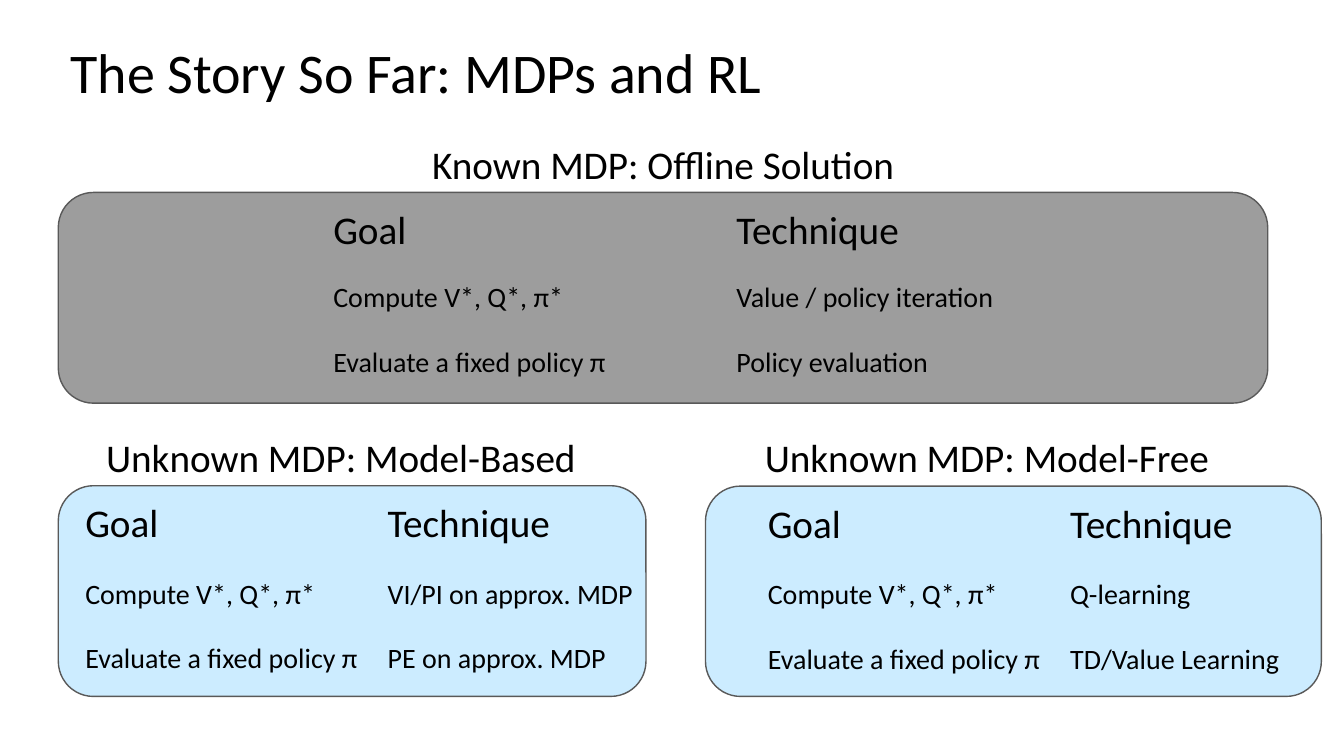
from dataclasses import dataclass

from lxml.etree import SubElement
from pptx import Presentation
from pptx.dml.color import RGBColor as Rgb
from pptx.enum.shapes import MSO_SHAPE as Shape
from pptx.enum.text import MSO_ANCHOR as Anchor, PP_ALIGN as Align
from pptx.oxml.ns import qn
from pptx.util import Cm, Pt


@dataclass(frozen=True)
class Theme:
    font: str = "Calibri"
    ink: Rgb = Rgb(0x00, 0x00, 0x00)
    edge: Rgb = Rgb(0x59, 0x59, 0x59)
    gray: Rgb = Rgb(0x9D, 0x9D, 0x9D)
    blue: Rgb = Rgb(0xCC, 0xEC, 0xFF)
    title: int = 40
    head: int = 28
    body: int = 20
    gap: int = 22  # space above a row, in points


@dataclass(frozen=True)
class Box:
    left: float
    top: float
    width: float
    height: float

    def place(self):
        return Cm(self.left), Cm(self.top), Cm(self.width), Cm(self.height)


THEME = Theme()
HEAD = 1.45  # height of a panel heading
LIST = 6.32  # height of a panel's text


def style(para, size):
    for run in para.runs:
        run.font.name = THEME.font
        run.font.size = Pt(size)
        run.font.color.rgb = THEME.ink


def add_title(slide, box, text):
    title = slide.shapes.title
    title.left, title.top, title.width, title.height = box.place()
    frame = title.text_frame
    frame.text = text
    frame.vertical_anchor = Anchor.MIDDLE
    para = frame.paragraphs[0]
    para.alignment = Align.LEFT
    para.line_spacing = 0.9
    style(para, THEME.title)


def add_text(slide, box):
    frame = slide.shapes.add_textbox(*box.place()).text_frame
    frame.word_wrap = True
    return frame


def add_tab(para, pos):
    stops = SubElement(para._p.get_or_add_pPr(), qn("a:tabLst"))
    SubElement(stops, qn("a:tab"), pos=str(Cm(pos)), algn="l")


def add_panel(slide, box, fill, head, rows, span, inset, width, tab, gap=THEME.gap):
    """Heading over a rounded box; span is the heading's offset and width."""
    # Heading
    shift, wide = span
    frame = add_text(slide, Box(box.left + shift, box.top - HEAD, wide, HEAD))
    frame.text = head
    para = frame.paragraphs[0]
    para.alignment = Align.CENTER
    style(para, THEME.head)

    # Rounded box
    card = slide.shapes.add_shape(Shape.ROUNDED_RECTANGLE, *box.place())
    card.shadow.inherit = False
    card.fill.solid()
    card.fill.fore_color.rgb = fill
    card.line.color.rgb = THEME.edge
    card.line.width = Pt(1)

    # Goals and techniques, in two columns
    frame = add_text(slide, Box(box.left + inset, box.top + 0.2, width, LIST))
    lines = [("Goal", "Technique"), *rows]
    frame.text = "\n".join("\t".join(line) for line in lines)
    for i, para in enumerate(frame.paragraphs):
        if i:
            para.space_before = Pt(gap if i == 1 else THEME.gap)
        add_tab(para, tab)
        style(para, THEME.body if i else THEME.head)


def main():
    deck = Presentation()
    deck.slide_width, deck.slide_height = Cm(33.87), Cm(19.05)
    slide = deck.slides.add_slide(deck.slide_layouts[5])
    goals = "Compute V*, Q*, π*", "Evaluate a fixed policy π"

    add_title(slide, Box(1.52, 1.02, 29.21, 1.75), "The Story So Far: MDPs and RL")

    # Known MDP
    add_panel(slide, Box(1.47, 4.85, 30.48, 5.31), THEME.gray,
              "Known MDP: Offline Solution",
              zip(goals, ("Value / policy iteration", "Policy evaluation")),
              span=(0, 30.48), inset=6.68, width=22.71, tab=10.16, gap=19.5)

    # Unknown MDP
    add_panel(slide, Box(1.47, 12.24, 14.81, 5.31), THEME.blue,
              "Unknown MDP: Model-Based",
              zip(goals, ("VI/PI on approx. MDP", "PE on approx. MDP")),
              span=(-0.4, 15.04), inset=0.43, width=15.04, tab=7.62)
    add_panel(slide, Box(17.78, 12.25, 15.52, 5.3), THEME.blue,
              "Unknown MDP: Model-Free",
              zip(goals, ("Q-learning", "TD/Value Learning")),
              span=(-0.43, 15.04), inset=1.32, width=14.17, tab=7.62)

    deck.save("out.pptx")


if __name__ == "__main__":
    main()
